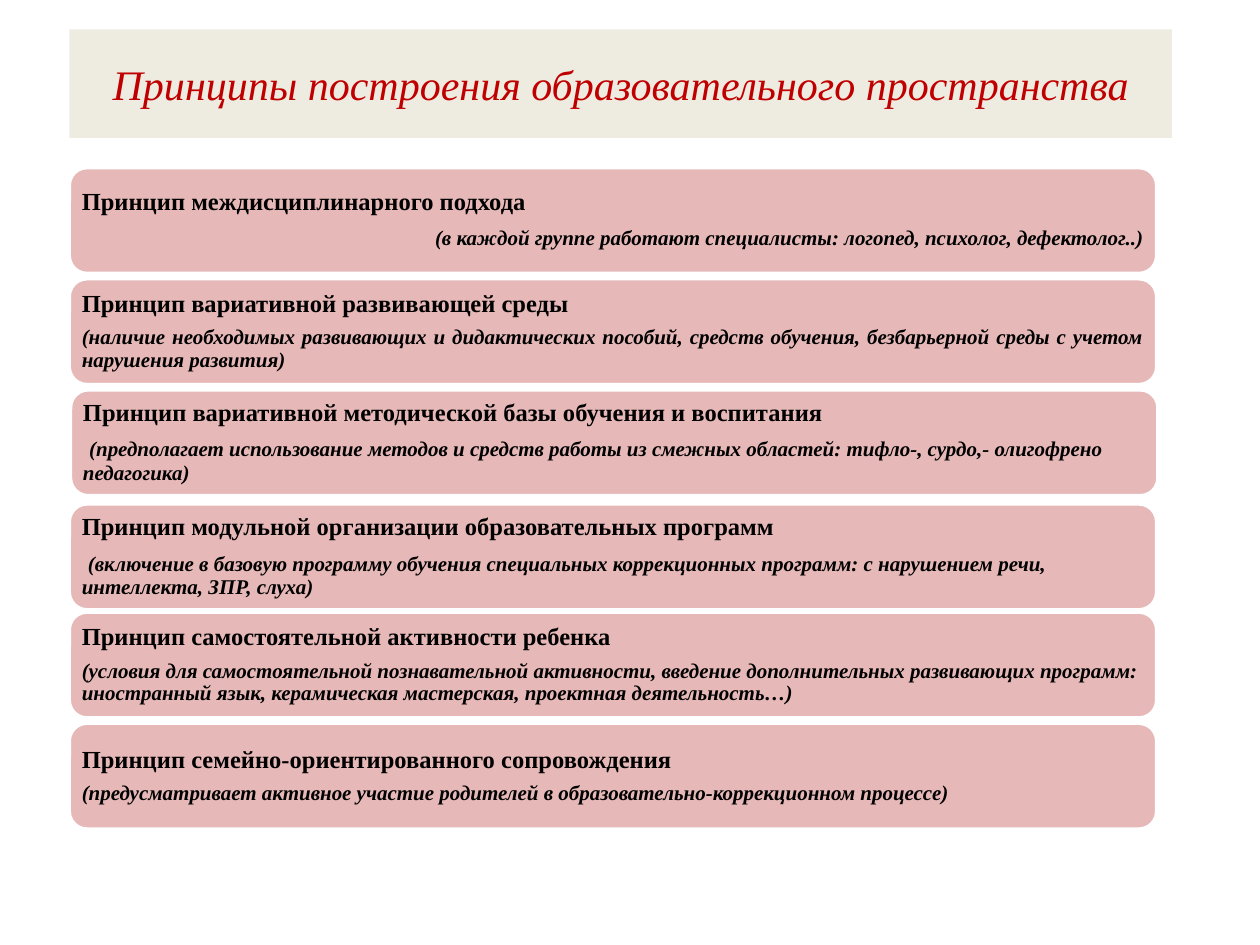
import pptx
import pptx.util
import pptx.dml.color
import pptx.enum.shapes
import pptx.enum.text
import pptx.oxml.ns
from lxml import etree

Pt = pptx.util.Pt
RGBColor = pptx.dml.color.RGBColor
ALIGN = pptx.enum.text.PP_ALIGN
MIDDLE = pptx.enum.text.MSO_ANCHOR.MIDDLE
qn = pptx.oxml.ns.qn

# Content: heading, note, note alignment, lead space, nudge (x, y)
TITLE = "Принципы построения образовательного пространства"
RULES = [
    ("Принцип междисциплинарного подхода",
     "(в каждой группе работают специалисты: логопед, психолог, дефектолог..)",
     ALIGN.RIGHT, " ", (0, 0)),
    ("Принцип вариативной развивающей среды",
     "(наличие необходимых развивающих и дидактических пособий, средств обучения, "
     "безбарьерной среды с учетом нарушения развития)",
     ALIGN.JUSTIFY, "", (0, 0)),
    ("Принцип вариативной методической базы обучения и воспитания",
     "(предполагает использование методов и средств работы из смежных областей: "
     "тифло-, сурдо,- олигофрено педагогика)",
     ALIGN.LEFT, " ", (0.7, 0)),
    ("Принцип модульной организации образовательных программ",
     "(включение в базовую программу обучения специальных коррекционных программ: "
     "с нарушением речи, интеллекта, ЗПР, слуха)",
     ALIGN.LEFT, " ", (0, 1.7)),
    ("Принцип самостоятельной активности ребенка",
     "(условия для самостоятельной познавательной активности, введение дополнительных "
     "развивающих программ: иностранный язык, керамическая мастерская, "
     "проектная деятельность…)",
     ALIGN.LEFT, "", (0, 0)),
    ("Принцип семейно-ориентированного сопровождения",
     "(предусматривает активное участие родителей в образовательно-коррекционном процессе)",
     ALIGN.LEFT, "", (0, 0)),
]

# Style and grid, in points
FONT = "Times New Roman"
BLACK = RGBColor(0x00, 0x00, 0x00)
WHITE = RGBColor(0xFF, 0xFF, 0xFF)
RED = RGBColor(0xC0, 0x00, 0x00)
PINK = RGBColor(0xE6, 0xB9, 0xB8)
CREAM = RGBColor(0xEE, 0xEC, 0xE1)
LEFT, TOP, WIDE, HIGH, STEP = 39.6, 95.8, 621.4, 60.5, 63.5


def style(run, size, color, bold=False, italic=False):
    font = run.font
    font.name, font.size = FONT, Pt(size)
    font.bold, font.italic = bold, italic
    font.color.rgb = color


def space(para):
    """Set tight lines, with a gap of 35% after the paragraph."""
    para.line_spacing = 0.9
    para.space_after = Pt(0)
    after = para._p.pPr.find(qn("a:spcAft"))
    after.clear()
    etree.SubElement(after, qn("a:spcPct")).set("val", "35000")


def add_card(slide, x, y, head, note, align, lead):
    card = slide.shapes.add_shape(
        pptx.enum.shapes.MSO_SHAPE.ROUNDED_RECTANGLE, Pt(x), Pt(y), Pt(WIDE), Pt(HIGH))
    card.shadow.inherit = False
    card.fill.solid()
    card.fill.fore_color.rgb = PINK
    card.line.color.rgb = WHITE
    card.line.width = Pt(2)
    frame = card.text_frame
    frame.word_wrap = True
    frame.vertical_anchor = MIDDLE
    frame.margin_left = frame.margin_right = Pt(4.2)
    frame.margin_top = frame.margin_bottom = Pt(2.1)

    first = frame.paragraphs[0]
    first.text = head
    first.alignment = ALIGN.LEFT
    space(first)
    style(first.runs[0], 14, BLACK, bold=True)

    second = frame.add_paragraph()
    second.alignment = align
    space(second)
    if lead:
        run = second.add_run()
        run.text = lead
        style(run, 14, BLACK, bold=True)
    run = second.add_run()
    run.text = note
    style(run, 12, BLACK, bold=True, italic=True)


def main():
    deck = pptx.Presentation()
    deck.slide_width, deck.slide_height = Pt(720), Pt(540)
    slide = deck.slides.add_slide(deck.slide_layouts[5])

    # Principle cards
    for i, (head, note, align, lead, (dx, dy)) in enumerate(RULES):
        add_card(slide, LEFT + dx, TOP + i * STEP + dy, head, note, align, lead)

    # Title band
    title = slide.shapes.title
    title.left, title.top = Pt(LEFT), Pt(16.8)
    title.width, title.height = Pt(630), Pt(62)
    title.fill.solid()
    title.fill.fore_color.rgb = CREAM
    frame = title.text_frame
    frame.text = TITLE
    frame.word_wrap = True
    frame.vertical_anchor = MIDDLE
    frame.paragraphs[0].alignment = ALIGN.CENTER
    style(frame.paragraphs[0].runs[0], 24, RED, italic=True)

    deck.save("out.pptx")


if __name__ == "__main__":
    main()
